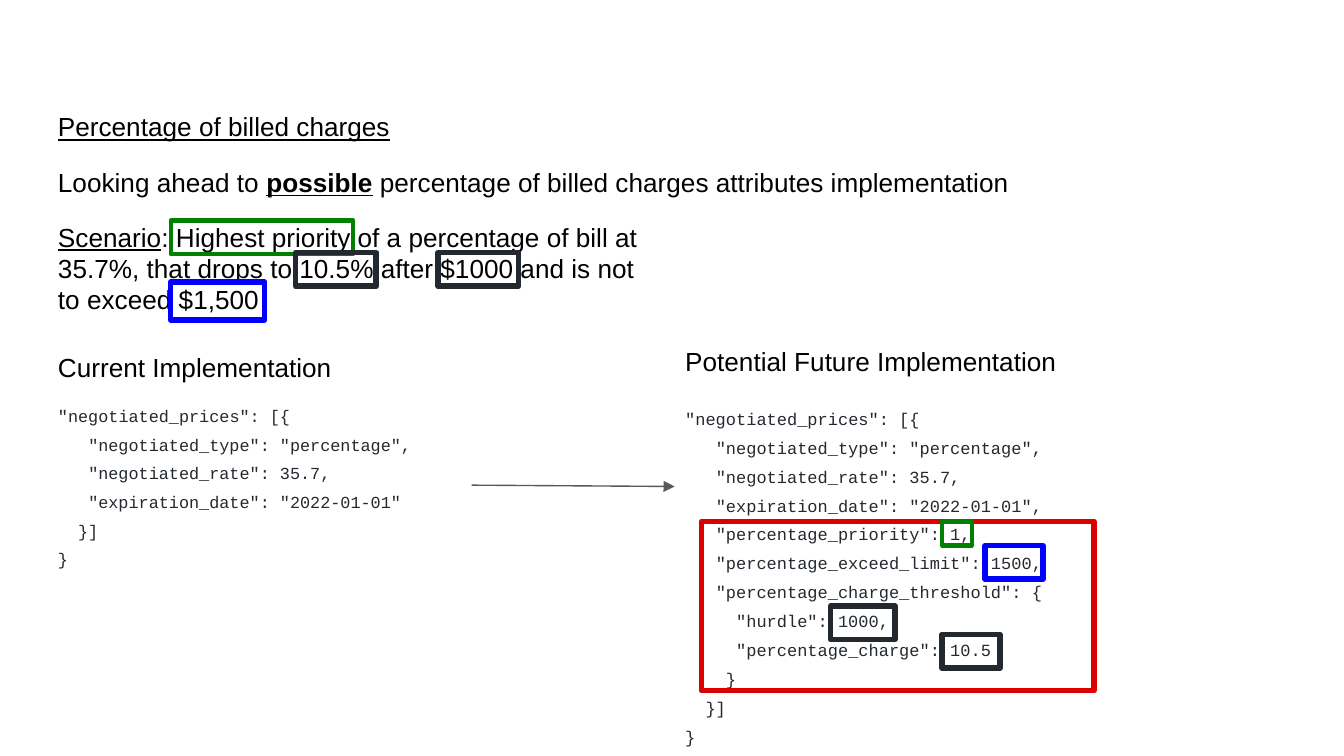
from typing import NamedTuple

from lxml.etree import SubElement
from pptx import Presentation
from pptx.dml.color import RGBColor
from pptx.enum.shapes import MSO_CONNECTOR, MSO_SHAPE
from pptx.enum.text import MSO_ANCHOR
from pptx.oxml.ns import qn
from pptx.util import Inches, Pt

BLACK = RGBColor(0x00, 0x00, 0x00)
INK = RGBColor(0x24, 0x29, 0x2F)
GRAY = RGBColor(0x59, 0x59, 0x59)
RED = RGBColor(0xDD, 0x00, 0x00)
GREEN = RGBColor(0x00, 0x80, 0x00)
BLUE = RGBColor(0x00, 0x00, 0xFF)

COLS, ROWS = 100, 56.25
WIDTH = Inches(10)
HEIGHT = WIDTH * 9 // 16
LEFT, RIGHT = 3.33, 50
CHAR_WIDTH = 0.6


class Area(NamedTuple):
    col: float
    row: float
    cols: float
    rows: float


class Run(NamedTuple):
    text: str
    bold: bool = False
    underline: bool = False


class Passage(NamedTuple):
    area: Area
    runs: list[Run]


class Code(NamedTuple):
    area: Area
    size: float
    lines: list[tuple[int, str]]


class Frame(NamedTuple):
    area: Area
    color: RGBColor
    weight: float = 3


PASSAGES = [
    Passage(Area(LEFT, 7.25, 67.4, 4.4),
            [Run("Percentage of billed charges", underline=True)]),
    Passage(Area(LEFT, 11.4, 74.6, 4.4),
            [Run("Looking ahead to "),
             Run("possible", bold=True, underline=True),
             Run(" percentage of billed charges attributes implementation")]),
    Passage(Area(LEFT, 15.45, 46.1, 9.1),
            [Run("Scenario", underline=True),
             Run(": Highest priority of a percentage of bill at 35.7%, that drops "
                 "to 10.5% after $1000 and is not to exceed $1,500")]),
    Passage(Area(LEFT, 25.15, 56.6, 4.4), [Run("Current Implementation")]),
    Passage(Area(RIGHT, 24.7, 56.6, 4.4), [Run("Potential Future Implementation")]),
]

OPENING = [
    (0, '"negotiated_prices": [{'),
    (3, '"negotiated_type": "percentage",'),
    (3, '"negotiated_rate": 35.7,'),
]
CLOSING = [(2, "}]"), (0, "}")]

CODES = [
    Code(Area(LEFT, 28.95, 31.8, 14.4), 9,
         OPENING + [(3, '"expiration_date": "2022-01-01"')] + CLOSING),
    Code(Area(RIGHT, 28.55, 50, 28), 9.1,
         OPENING + [
             (3, '"expiration_date": "2022-01-01",'),
             (3, '"percentage_priority": 1,'),
             (3, '"percentage_exceed_limit": 1500,'),
             (3, '"percentage_charge_threshold": {'),
             (5, '"hurdle": 1000,'),
             (5, '"percentage_charge": 10.5'),
             (4, "}"),
         ] + CLOSING),
]

FRAMES = [
    Frame(Area(52.2, 38.8, 29.2, 12.6), RED),
    Frame(Area(70.1, 38.8, 2.2, 1.8), GREEN, 2.25),
    Frame(Area(12.7, 16.4, 13.6, 2.5), GREEN, 2.25),
    Frame(Area(73.3, 40.6, 4.3, 2.5), BLUE),
    Frame(Area(12.7, 21, 7, 2.8), BLUE),
    Frame(Area(61.8, 45.1, 4.8, 2.5), INK),
    Frame(Area(70.1, 47.2, 4.3, 2.5), INK),
    Frame(Area(22, 18.8, 6, 2.5), INK),
    Frame(Area(32.6, 18.8, 6, 2.5), INK),
]


def x(cols: float) -> int:
    return round(WIDTH * cols / COLS)


def y(rows: float) -> int:
    return round(HEIGHT * rows / ROWS)


def place(area: Area) -> tuple[int, int, int, int]:
    return x(area.col), y(area.row), x(area.cols), y(area.rows)


def add_frame_text(s, area: Area, anchor=MSO_ANCHOR.TOP):
    tf = s.shapes.add_textbox(*place(area)).text_frame
    tf.word_wrap = True
    tf.vertical_anchor = anchor
    tf.margin_left = tf.margin_right = Inches(0.1)
    tf.margin_top = tf.margin_bottom = Inches(0.1)
    return tf


def add_run(p, text: str, *, font: str = "Arial", size: float = 14,
            color: RGBColor = BLACK, bold: bool = False,
            underline: bool = False) -> None:
    r = p.add_run()
    r.text = text
    r.font.name = font
    r.font.size = Pt(size)
    r.font.color.rgb = color
    r.font.bold = bold
    r.font.underline = underline


def add_passage(s, passage: Passage) -> None:
    p = add_frame_text(s, passage.area).paragraphs[0]
    for run in passage.runs:
        add_run(p, run.text, bold=run.bold, underline=run.underline)


def add_code(s, code: Code) -> None:
    tf = add_frame_text(s, code.area, MSO_ANCHOR.BOTTOM)
    for i, (indent, text) in enumerate(code.lines):
        p = tf.add_paragraph() if i else tf.paragraphs[0]
        p.line_spacing = 1.42
        pPr = p._p.get_or_add_pPr()
        pPr.set("marL", str(Pt(indent * CHAR_WIDTH * code.size)))
        pPr.set("indent", "0")
        add_run(p, text, font="Courier New", size=code.size, color=INK)


def add_frame(s, frame: Frame) -> None:
    sp = s.shapes.add_shape(MSO_SHAPE.RECTANGLE, *place(frame.area))
    sp.shadow.inherit = False
    sp.fill.background()
    sp.line.color.rgb = frame.color
    sp.line.width = Pt(frame.weight)


def add_arrow(s, start: tuple[float, float], end: tuple[float, float]) -> None:
    cx = s.shapes.add_connector(MSO_CONNECTOR.STRAIGHT, x(start[0]), y(start[1]),
                                x(end[0]), y(end[1]))
    cx.line.color.rgb = GRAY
    cx.line.width = Pt(0.75)
    SubElement(cx.line._get_or_add_ln(), qn("a:tailEnd"),
               type="triangle", w="med", len="med")
    SubElement(cx._element.spPr, qn("a:effectLst"))


def main() -> None:
    prs = Presentation()
    prs.slide_width, prs.slide_height = WIDTH, HEIGHT
    s = prs.slides.add_slide(prs.slide_layouts[6])
    for passage in PASSAGES:
        add_passage(s, passage)
    for code in CODES:
        add_code(s, code)
    add_arrow(s, (35.1, 36.1), (50.2, 36.2))
    for frame in FRAMES:
        add_frame(s, frame)
    prs.save("out.pptx")


if __name__ == "__main__":
    main()
